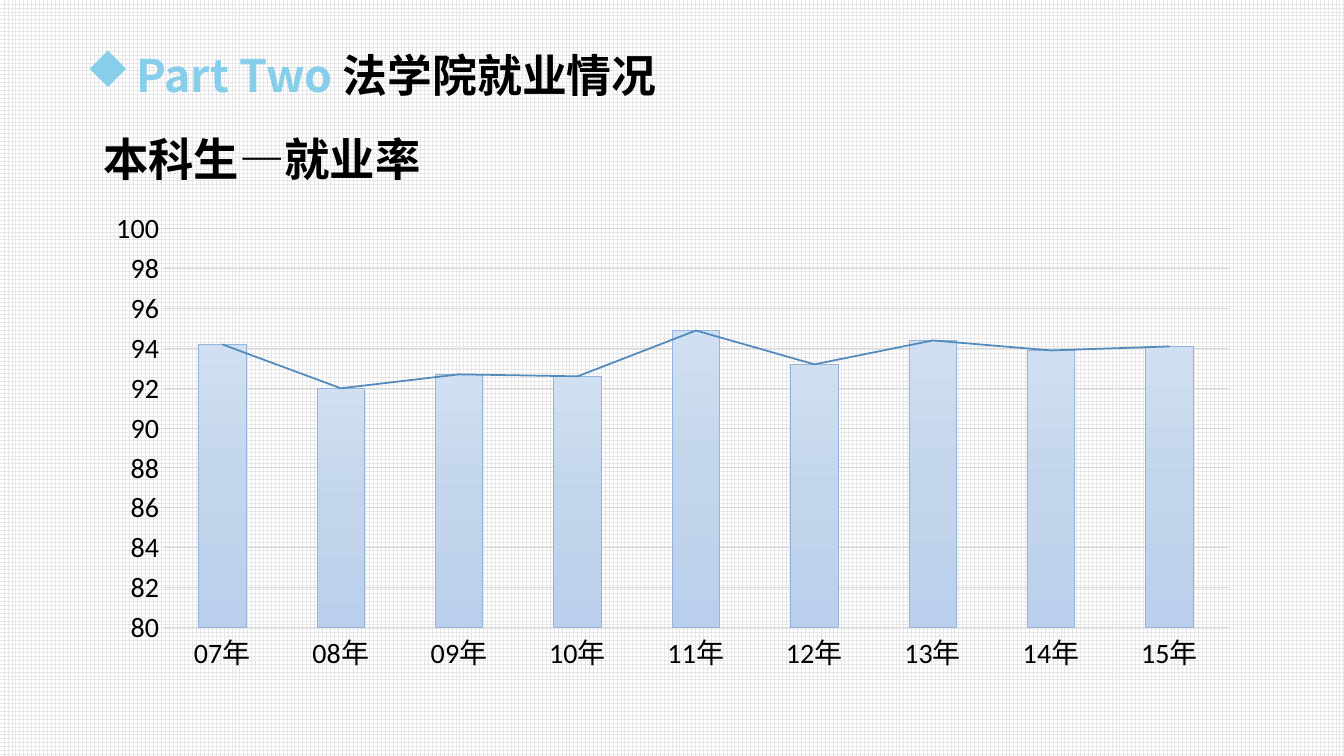
import copy
from dataclasses import dataclass

import pptx
import pptx.chart.data
import pptx.dml.color
import pptx.enum.chart
import pptx.enum.dml
import pptx.enum.text
import pptx.oxml
import pptx.oxml.ns
import pptx.util

EMU_PER_PX = 914400 / 100.8
YEARS = [f"{year:02d}年" for year in range(7, 16)]
RATES = [94.2, 92, 92.7, 92.6, 94.9, 93.2, 94.4, 93.9, 94.1]


@dataclass(frozen=True)
class Theme:
    """Colours, fonts and type sizes of the deck."""
    text: str = "000000"
    accent: str = "87CEEB"
    paper: str = "FFFFFF"
    paper_grid: str = "E7E6E6"
    rule: str = "D9D9D9"
    bar_stops: tuple = ((0, "D0DFF1"), (0.5, "C3D5EC"), (1, "B9CFEC"))
    bar_edge: str = "94B4DB"
    trend: str = "518ABD"
    heading_font: str = "Noto Sans CJK SC"
    chart_font: str = "Calibri"
    heading_size: float = 32
    title_size: float = 32.4
    chart_size: float = 20


THEME = Theme()


def px(length):
    """Turn pixels into EMU."""
    return pptx.util.Emu(round(length * EMU_PER_PX))


def rgb(code):
    """Turn a hex code into a colour."""
    return pptx.dml.color.RGBColor.from_string(code)


def add_text(para, text, *, size, color=THEME.text, font=THEME.heading_font, bold=True):
    """Append a formatted span to a paragraph."""
    span = para.add_run()
    span.text = text
    span.font.size = pptx.util.Pt(size)
    span.font.bold = bold
    span.font.name = font
    span.font.color.rgb = rgb(color)
    latin = span._r.find(".//" + pptx.oxml.ns.qn("a:latin"))
    latin.addnext(latin.makeelement(pptx.oxml.ns.qn("a:ea"), {"typeface": font}))


def set_line(line, color, width):
    """Give a line its colour and width in points."""
    line.color.rgb = rgb(color)
    line.width = pptx.util.Pt(width)


def add_heading(page, left, top, width, height):
    """Place the bulleted section heading."""
    frame = page.shapes.add_textbox(px(left), px(top), px(width), px(height)).text_frame
    frame.word_wrap = True
    frame.auto_size = pptx.enum.text.MSO_AUTO_SIZE.SHAPE_TO_FIT_TEXT
    para = frame.paragraphs[0]
    add_text(para, "Part Two ", size=THEME.heading_size, color=THEME.accent)
    add_text(para, "法学院就业情况", size=THEME.heading_size)
    properties = para._p.get_or_add_pPr()
    indent = pptx.util.Inches(0.5)
    properties.set("marL", str(indent))
    properties.set("indent", str(-indent))
    for tag, attributes in (("a:buFont", {"typeface": "Wingdings", "charset": "2"}),
                            ("a:buChar", {"char": "u"})):
        properties.append(properties.makeelement(pptx.oxml.ns.qn(tag), attributes))


def fill_title(page, left, top, width, height):
    """Move and fill the title placeholder."""
    title = page.shapes.title
    title.left, title.top, title.width, title.height = map(px, (left, top, width, height))
    frame = title.text_frame
    frame.word_wrap = True
    frame.auto_size = pptx.enum.text.MSO_AUTO_SIZE.NONE
    frame.vertical_anchor = pptx.enum.text.MSO_ANCHOR.MIDDLE
    para = frame.paragraphs[0]
    para.alignment = pptx.enum.text.PP_ALIGN.LEFT
    para.line_spacing = 0.9
    add_text(para, "本科生—就业率", size=THEME.title_size)


def move_to_line_plot(chart, series):
    """Move a column series into a line plot on the same axes."""
    qn = pptx.oxml.ns.qn
    element = series._element
    bar_plot = element.getparent()
    line_plot = pptx.oxml.parse_xml(
        f'<c:lineChart {pptx.oxml.ns.nsdecls("c")}><c:grouping val="standard"/>'
        '<c:varyColors val="0"/><c:marker val="1"/></c:lineChart>')
    for bar_setting in element.findall(qn("c:invertIfNegative")):
        element.remove(bar_setting)
    line_plot.insert(2, element)
    for axis_id in bar_plot.findall(qn("c:axId")):
        line_plot.append(copy.deepcopy(axis_id))
    bar_plot.addnext(line_plot)
    return chart.plots[1].series[0]


def style_axes(chart):
    """Format the category and value axes."""
    values, categories = chart.value_axis, chart.category_axis
    for axis in (values, categories):
        axis.major_tick_mark = pptx.enum.chart.XL_TICK_MARK.NONE
        axis.minor_tick_mark = pptx.enum.chart.XL_TICK_MARK.NONE
    values.minimum_scale, values.maximum_scale, values.major_unit = 80, 100, 2
    values.format.line.fill.background()
    values.has_major_gridlines = True
    set_line(values.major_gridlines.format.line, THEME.rule, 0.75)
    set_line(categories.format.line, THEME.rule, 0.75)


def style_bars(bars):
    """Give the columns a vertical gradient and a thin edge."""
    fill = bars.format.fill
    fill.gradient()
    fill.gradient_angle = 270
    stop_list = bars._element.find(".//" + pptx.oxml.ns.qn("a:gsLst"))
    stop_list.insert(1, copy.deepcopy(stop_list[0]))
    for stop, (position, color) in zip(fill.gradient_stops, THEME.bar_stops):
        stop.position = position
        stop.color.rgb = rgb(color)
    set_line(bars.format.line, THEME.bar_edge, 0.75)


def add_rate_chart(page, left, top, width, height):
    """Place the employment chart of columns with a line."""
    data = pptx.chart.data.CategoryChartData()
    data.categories = YEARS
    for name in ("Series 1", "Series 2"):
        data.add_series(name, RATES)
    chart = page.shapes.add_chart(
        pptx.enum.chart.XL_CHART_TYPE.COLUMN_CLUSTERED,
        px(left), px(top), px(width), px(height), data).chart
    chart.has_legend = False
    chart.has_title = False
    chart.font.name = THEME.chart_font
    chart.font.size = pptx.util.Pt(THEME.chart_size)
    chart.font.color.rgb = rgb(THEME.text)
    style_axes(chart)
    plot = chart.plots[0]
    plot.gap_width = 150
    plot.vary_by_categories = False
    bars, trend = plot.series
    style_bars(bars)
    trend = move_to_line_plot(chart, trend)
    trend.smooth = False
    trend.marker.style = pptx.enum.chart.XL_MARKER_STYLE.NONE
    set_line(trend.format.line, THEME.trend, 1.25)


def add_chart_page(deck):
    """Add the employment page with its patterned background."""
    page = deck.slides.add_slide(deck.slide_layouts[5])
    fill = page.background.fill
    fill.patterned()
    fill.pattern = pptx.enum.dml.MSO_PATTERN.LARGE_GRID
    fill.fore_color.rgb = rgb(THEME.paper_grid)
    fill.back_color.rgb = rgb(THEME.paper)
    fill_title(page, 93, 134, 1159, 56)
    add_rate_chart(page, 93, 202, 1159, 480)
    add_heading(page, 76, 43, 939, 65)


def main():
    """Build and save the deck."""
    deck = pptx.Presentation()
    deck.slide_width, deck.slide_height = px(1344), px(756)
    add_chart_page(deck)
    deck.save("out.pptx")


if __name__ == "__main__":
    main()
